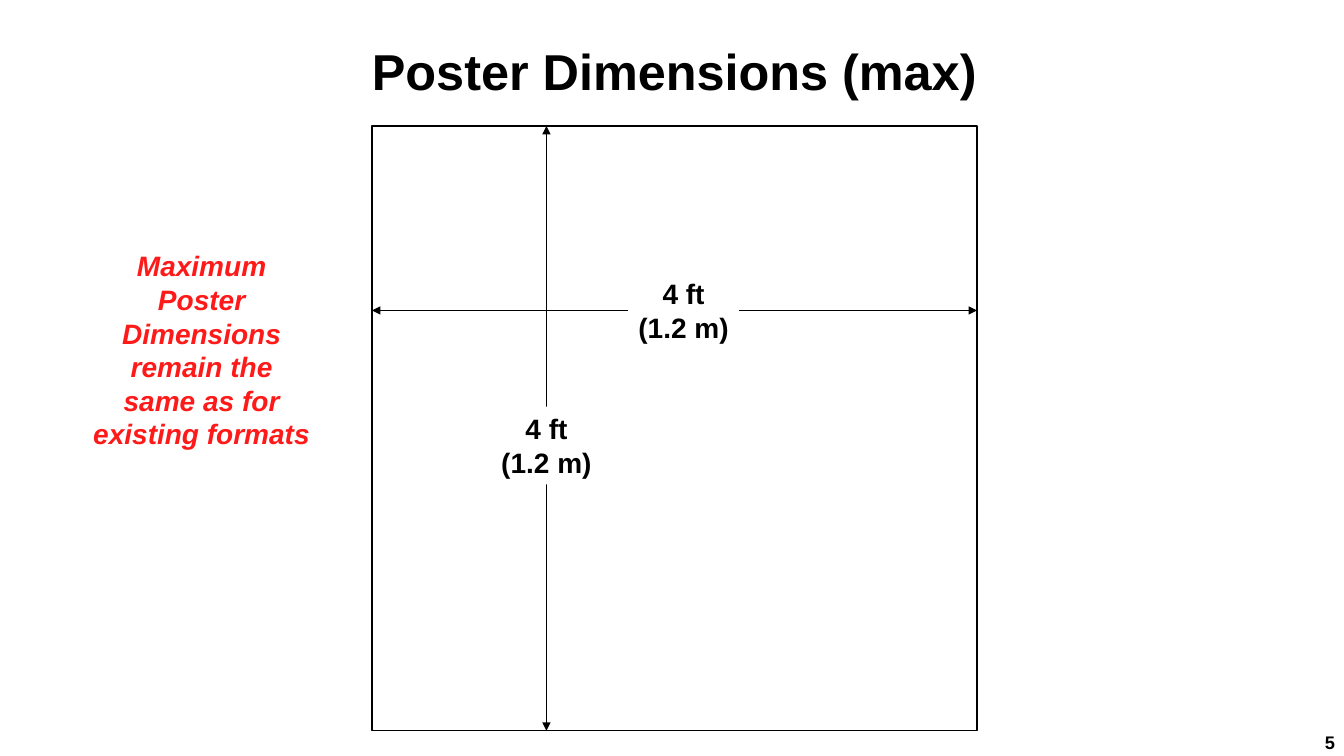
import dataclasses

import pptx
import pptx.dml.color
import pptx.enum.shapes
import pptx.enum.text
import pptx.oxml
import pptx.oxml.ns
import pptx.util
from pptx.util import Inches

ALIGN = pptx.enum.text.PP_ALIGN
ANCHOR = pptx.enum.text.MSO_ANCHOR
RECTANGLE = pptx.enum.shapes.MSO_SHAPE.RECTANGLE


@dataclasses.dataclass(frozen=True)
class Theme:
    font: str = "Arial"
    ink: str = "000000"
    paper: str = "FFFFFF"
    accent: str = "FF1A1A"
    title_size: int = 36
    body_size: int = 20
    number_size: int = 13
    line_width: int = 1


THEME = Theme()


def rgb(colour):
    return pptx.dml.color.RGBColor.from_string(colour)


def write(frame, lines, size, colour=THEME.ink, align=ALIGN.CENTER,
          anchor=ANCHOR.TOP, italic=False, wrap=True):
    """Fill a text frame with one bold paragraph per line."""
    frame.word_wrap = wrap
    frame.vertical_anchor = anchor
    for index, line in enumerate(lines):
        paragraph = frame.paragraphs[0] if index == 0 else frame.add_paragraph()
        paragraph.alignment = align
        run = paragraph.add_run()
        run.text = line
        run.font.name = THEME.font
        run.font.size = pptx.util.Pt(size)
        run.font.bold = True
        run.font.italic = italic
        run.font.color.rgb = rgb(colour)


def add_text(slide, box, lines, size, **style):
    textbox = slide.shapes.add_textbox(*map(Inches, box))
    write(textbox.text_frame, lines, size, **style)


def style_line(line):
    line.color.rgb = rgb(THEME.ink)
    line.width = pptx.util.Pt(THEME.line_width)


def add_poster(slide, left, top, side):
    poster = slide.shapes.add_shape(RECTANGLE, *map(Inches, (left, top, side, side)))
    poster.shadow.inherit = False
    poster.fill.background()
    style_line(poster.line)


def add_dimension(slide, start, end, label_centre, lines):
    """Draw a double-headed arrow with a label that interrupts it."""
    arrow = slide.shapes.add_connector(
        pptx.enum.shapes.MSO_CONNECTOR.STRAIGHT, *map(Inches, (*start, *end)))
    style_line(arrow.line)
    outline = arrow.line._get_or_add_ln()
    for tag in ("a:headEnd", "a:tailEnd"):
        outline.append(pptx.oxml.parse_xml(
            f'<{tag} {pptx.oxml.ns.nsdecls("a")} type="triangle"/>'))
    arrow._element.spPr.append(pptx.oxml.parse_xml(
        f'<a:effectLst {pptx.oxml.ns.nsdecls("a")}/>'))

    width, height = 1.1, 0.77
    x, y = label_centre
    label = slide.shapes.add_shape(
        RECTANGLE, *map(Inches, (x - width / 2, y - height / 2, width, height)))
    label.shadow.inherit = False
    label.fill.solid()
    label.fill.fore_color.rgb = rgb(THEME.paper)
    label.line.fill.background()
    write(label.text_frame, lines, THEME.body_size, wrap=False)


def main():
    deck = pptx.Presentation()
    deck.slide_width, deck.slide_height = Inches(13.33), Inches(7.5)
    slide = deck.slides.add_slide(deck.slide_layouts[6])

    add_text(slide, (0.96, 0.15, 11.46, 1.1), ["Poster Dimensions (max)"],
             THEME.title_size, anchor=ANCHOR.MIDDLE)
    add_text(slide, (10.61, 7.21, 2.73, 0.29), ["5"], THEME.number_size,
             align=ALIGN.RIGHT)

    left, top, side = 3.69, 1.25, 6
    add_poster(slide, left, top, side)

    length = ["4 ft", "(1.2 m)"]
    height_x, width_y = 5.42, 3.08
    add_dimension(slide, (height_x, top), (height_x, top + side),
                  (height_x, 4.42), length)
    add_dimension(slide, (left, width_y), (left + side, width_y),
                  (6.78, width_y), length)

    add_text(slide, (0.82, 2.42, 2.36, 2.12),
             ["Maximum Poster Dimensions remain the same as for existing formats"],
             THEME.body_size, colour=THEME.accent, italic=True)

    deck.save("out.pptx")


if __name__ == "__main__":
    main()
